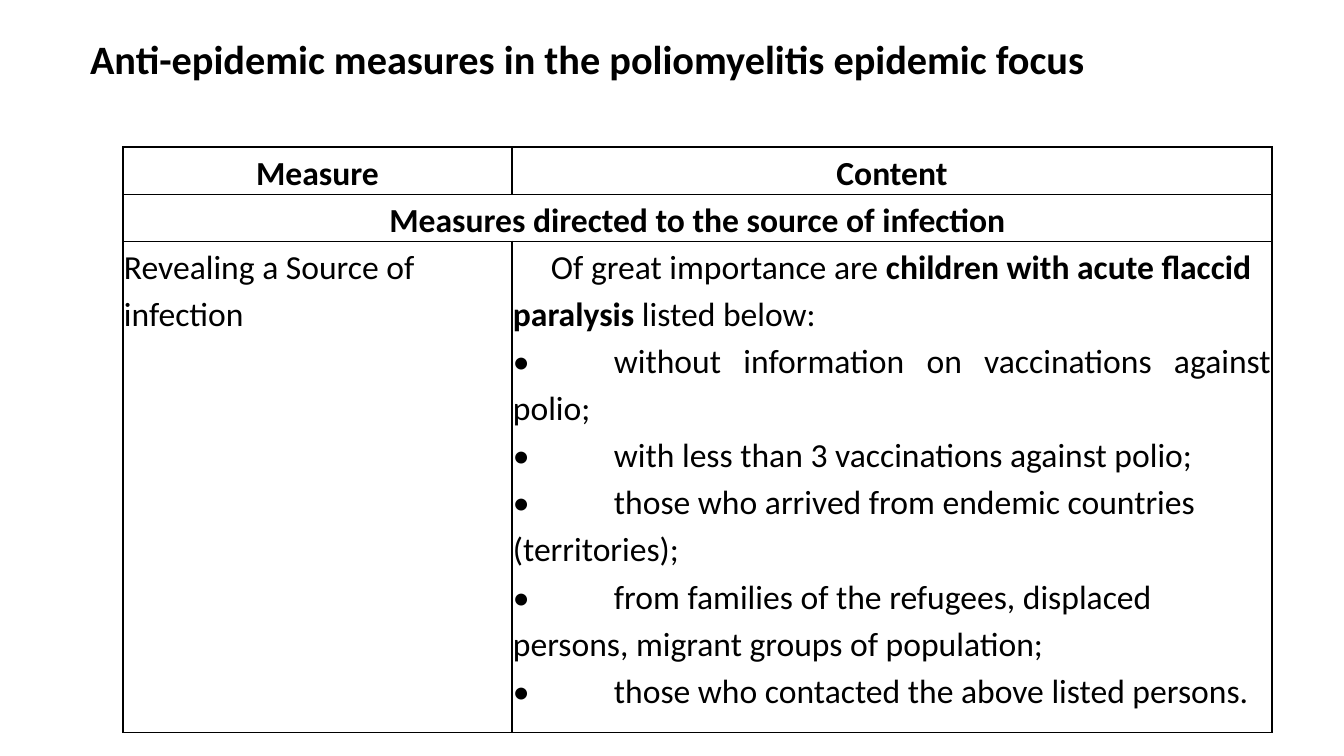
from lxml import etree
from pptx import Presentation
from pptx import util as u
from pptx.dml.color import RGBColor
from pptx.enum import text
from pptx.oxml.ns import qn

COLOURS = {"ink": "000000"}
FONT = "Calibri"
BODY_SIZE = 24
TITLE_BOX = (80, 35, 1159, 96)
TABLE_BOX = (123, 147, 1149, 585)
COLUMN_WIDTHS = (389, 760)
ROW_HEIGHTS = (47, 47, 491)
GROUPS = [
    "without information on vaccinations against polio;",
    "with less than 3 vaccinations against polio;",
    "those who arrived from endemic countries (territories);",
    "from families of the refugees, displaced persons, migrant groups of population;",
    "those who contacted the above listed persons.",
]


def px(length):
    return u.Emu(round(length * 914400 / 100.8))


def style_span(span, size, bold):
    span.font.name = FONT
    span.font.size = u.Pt(size)
    span.font.bold = bold
    span.font.color.rgb = RGBColor.from_string(COLOURS["ink"])


def add_title(page, box, wording):
    title = page.shapes.title
    title.left, title.top, title.width, title.height = map(px, box)
    frame = title.text_frame
    frame.text = wording
    frame.word_wrap = True
    frame.vertical_anchor = text.MSO_ANCHOR.TOP
    para = frame.paragraphs[0]
    para.alignment = text.PP_ALIGN.LEFT
    para.line_spacing = 0.9
    style_span(para.runs[0], 28.8, True)


def border_cell(cell):
    properties = cell._tc.get_or_add_tcPr()
    for position, side in enumerate(("lnL", "lnR", "lnT", "lnB")):
        line = etree.Element(qn(f"a:{side}"), w=str(u.Pt(1)))
        fill = etree.SubElement(line, qn("a:solidFill"))
        etree.SubElement(fill, qn("a:srgbClr"), val=COLOURS["ink"])
        properties.insert(position, line)


def set_tab(para, distance):
    stops = etree.SubElement(para._p.get_or_add_pPr(), qn("a:tabLst"))
    etree.SubElement(stops, qn("a:tab"), pos=str(px(distance)), algn="l")


def fill_cell(cell, paragraphs, alignment=text.PP_ALIGN.LEFT):
    frame = cell.text_frame
    for index, spans in enumerate(paragraphs):
        para = frame.add_paragraph() if index else frame.paragraphs[0]
        para.alignment = alignment
        para.line_spacing = 1.15
        for wording, bold in spans:
            span = para.add_run()
            span.text = wording
            style_span(span, BODY_SIZE, bold)


def add_measures_table(page, box):
    table = page.shapes.add_table(
        len(ROW_HEIGHTS), len(COLUMN_WIDTHS), *map(px, box)
    ).table
    table.first_row = False
    table.horz_banding = False
    for column, width in zip(table.columns, COLUMN_WIDTHS):
        column.width = px(width)
    for row, height in zip(table.rows, ROW_HEIGHTS):
        row.height = px(height)
    for cell in table.iter_cells():
        cell.margin_left = cell.margin_right = px(1)
        cell.margin_top = cell.margin_bottom = 0
        cell.fill.background()
        border_cell(cell)
    table.cell(1, 0).merge(table.cell(1, 1))

    headings = {
        (0, 0): "Measure",
        (0, 1): "Content",
        (1, 0): "Measures directed to the source of infection",
    }
    for place, heading in headings.items():
        fill_cell(table.cell(*place), [[(heading, True)]], text.PP_ALIGN.CENTER)

    fill_cell(table.cell(2, 0), [[("Revealing a Source of infection", False)]])
    introduction = [
        ("Of great importance are ", False),
        ("children with acute flaccid paralysis", True),
        (" listed below:", False),
    ]
    content = table.cell(2, 1)
    fill_cell(content, [introduction] + [[(f"•\t{group}", False)] for group in GROUPS])
    opening, *listed = content.text_frame.paragraphs
    opening._p.get_or_add_pPr().set("indent", str(px(38)))
    for para in listed:
        set_tab(para, 101)
    listed[0].alignment = text.PP_ALIGN.JUSTIFY


def main():
    deck = Presentation()
    deck.slide_width, deck.slide_height = px(1344), px(756)
    page = deck.slides.add_slide(deck.slide_layouts[5])
    add_title(page, TITLE_BOX, "Anti-epidemic measures in the poliomyelitis epidemic focus")
    add_measures_table(page, TABLE_BOX)
    deck.save("out.pptx")


if __name__ == "__main__":
    main()
